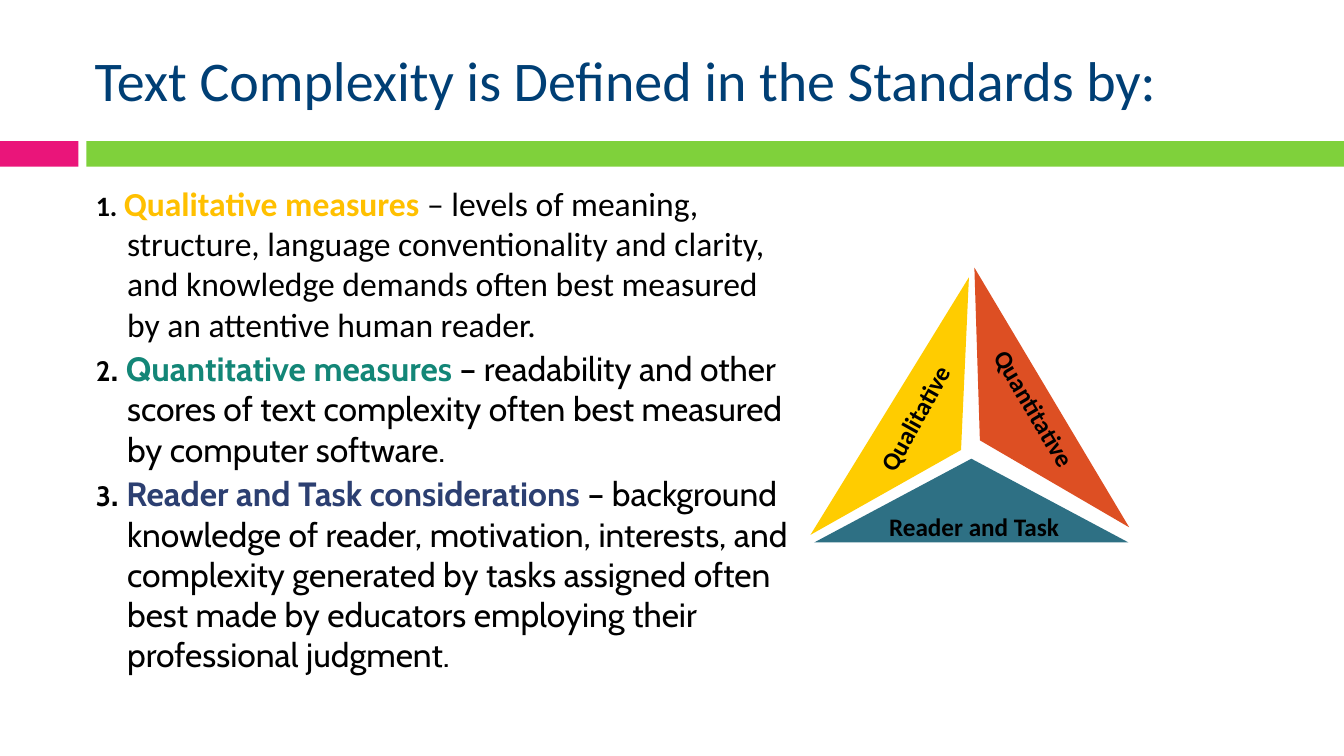
from dataclasses import dataclass

from pptx import Presentation
from pptx.dml.color import RGBColor
from pptx.enum.shapes import MSO_SHAPE
from pptx.enum.text import MSO_ANCHOR, MSO_AUTO_SIZE, PP_ALIGN
from pptx.oxml.xmlchemy import OxmlElement
from pptx.util import Cm, Pt

RECTANGLE = MSO_SHAPE.RECTANGLE
TRIANGLE = MSO_SHAPE.ISOSCELES_TRIANGLE
MIDDLE, TOP = MSO_ANCHOR.MIDDLE, MSO_ANCHOR.TOP
LEFT, CENTER = PP_ALIGN.LEFT, PP_ALIGN.CENTER
NO_AUTOFIT = MSO_AUTO_SIZE.NONE
TITLE_AND_CONTENT = 1


@dataclass(frozen=True)
class Theme:
    plain_font: str = "Calibri"
    accent_font: str = "Cabin"
    title_size: int = 40
    body_size: int = 24
    number_size: int = 20
    label_size: int = 18
    ink: str = "000000"
    title: str = "003F75"
    pink: str = "EA157A"
    green: str = "7FD13B"
    yellow: str = "FFCC00"
    red: str = "DD4F23"
    teal: str = "2E7084"
    qualitative: str = "FFC000"
    quantitative: str = "138677"
    reader: str = "2C3F71"


THEME = Theme()

# Number, its dot, dot size, font, measure, colour, explanation
MEASURES = [
    ("1", ". ", THEME.number_size, THEME.plain_font,
     "Qualitative measures ", THEME.qualitative,
     "– levels of meaning, structure, language conventionality and clarity, "
     "and knowledge demands often best measured by an attentive human reader."),
    ("2", ". ", THEME.body_size, THEME.accent_font,
     "Quantitative measures ", THEME.quantitative,
     "– readability and other scores of text complexity often best measured "
     "by computer software."),
    ("3", ". ", THEME.body_size, THEME.accent_font,
     "Reader and Task considerations ", THEME.reader,
     "– background knowledge of reader, motivation, interests, and complexity "
     "generated by tasks assigned often best made by educators employing "
     "their professional judgment."),
]

# Colour, triangle box and rotation, label, label box and rotation (cm, degrees)
SIDES = [
    (THEME.yellow, (19.51, 9.73, 7.62, 2.11), 121.6,
     "Qualitative", (20.93, 10.03, 4.24, 1.02), 299.2),
    (THEME.red, (21.79, 9.5, 7.62, 2.11), 239.2,
     "Quantitative", (23.95, 9.78, 4.24, 1.02), 59.3),
    (THEME.teal, (20.52, 11.56, 7.92, 2.11), 0,
     "Reader and Task", (21.59, 12.75, 5.92, 1.02), 0),
]


def to_cm(box):
    return [Cm(length) for length in box]


def write_text(paragraph, text, *, size, color=THEME.ink,
               font=THEME.plain_font, bold=False):
    run = paragraph.add_run()
    run.text = text
    run.font.name = font
    run.font.size = Pt(size)
    run.font.bold = bold
    run.font.color.rgb = RGBColor.from_string(color)


def set_indent(paragraph, left, first_line=0):
    """Indent a paragraph, in cm, and take away its bullet."""
    properties = paragraph._p.get_or_add_pPr()
    properties.set("marL", str(Cm(left)))
    properties.set("indent", str(Cm(first_line)))
    properties.append(OxmlElement("a:buNone"))


def place_placeholder(placeholder, box, anchor):
    (placeholder.left, placeholder.top,
     placeholder.width, placeholder.height) = to_cm(box)
    frame = placeholder.text_frame
    frame.word_wrap = True
    frame.auto_size = NO_AUTOFIT
    frame.vertical_anchor = anchor
    return frame


def add_filled_shape(slide, preset, box, color, rotation=0):
    shape = slide.shapes.add_shape(preset, *to_cm(box))
    shape.shadow.inherit = False
    shape.fill.solid()
    shape.fill.fore_color.rgb = RGBColor.from_string(color)
    shape.line.fill.background()
    shape.rotation = rotation


def add_label(slide, text, box, rotation):
    label = slide.shapes.add_textbox(*to_cm(box))
    label.rotation = rotation
    label.text_frame.word_wrap = True
    paragraph = label.text_frame.paragraphs[0]
    paragraph.alignment = CENTER
    write_text(paragraph, text, size=THEME.label_size, bold=True)


def fill_title(slide, text):
    frame = place_placeholder(slide.shapes.title, (0.86, 0.76, 32.31, 2.49), MIDDLE)
    heading = frame.paragraphs[0]
    heading.alignment = LEFT
    set_indent(heading, 1.27)
    write_text(heading, text, size=THEME.title_size, color=THEME.title)


def fill_measures(slide):
    frame = place_placeholder(slide.placeholders[1], (0.89, 4.47, 19.48, 12.7), TOP)
    for index, measure in enumerate(MEASURES):
        number, dot, dot_size, font, name, color, explanation = measure
        item = frame.add_paragraph() if index else frame.paragraphs[0]
        item.space_before = Pt(3 if index else 0)
        set_indent(item, 2.06, -0.79)
        write_text(item, number, size=THEME.number_size, font=font, bold=True)
        write_text(item, dot, size=dot_size, font=font, bold=True)
        write_text(item, name, size=THEME.body_size, font=font, color=color, bold=True)
        write_text(item, explanation, size=THEME.body_size, font=font)


def main():
    deck = Presentation()
    deck.slide_width, deck.slide_height = Cm(33.87), Cm(19.05)
    slide = deck.slides.add_slide(deck.slide_layouts[TITLE_AND_CONTENT])

    add_filled_shape(slide, RECTANGLE, (0, 3.56, 1.98, 0.64), THEME.pink)
    add_filled_shape(slide, RECTANGLE, (2.18, 3.56, 31.69, 0.64), THEME.green)
    fill_title(slide, "Text Complexity is Defined in the Standards by:")
    fill_measures(slide)
    for color, side_box, side_turn, label, label_box, label_turn in SIDES:
        add_filled_shape(slide, TRIANGLE, side_box, color, side_turn)
        add_label(slide, label, label_box, label_turn)

    deck.save("out.pptx")


if __name__ == "__main__":
    main()
